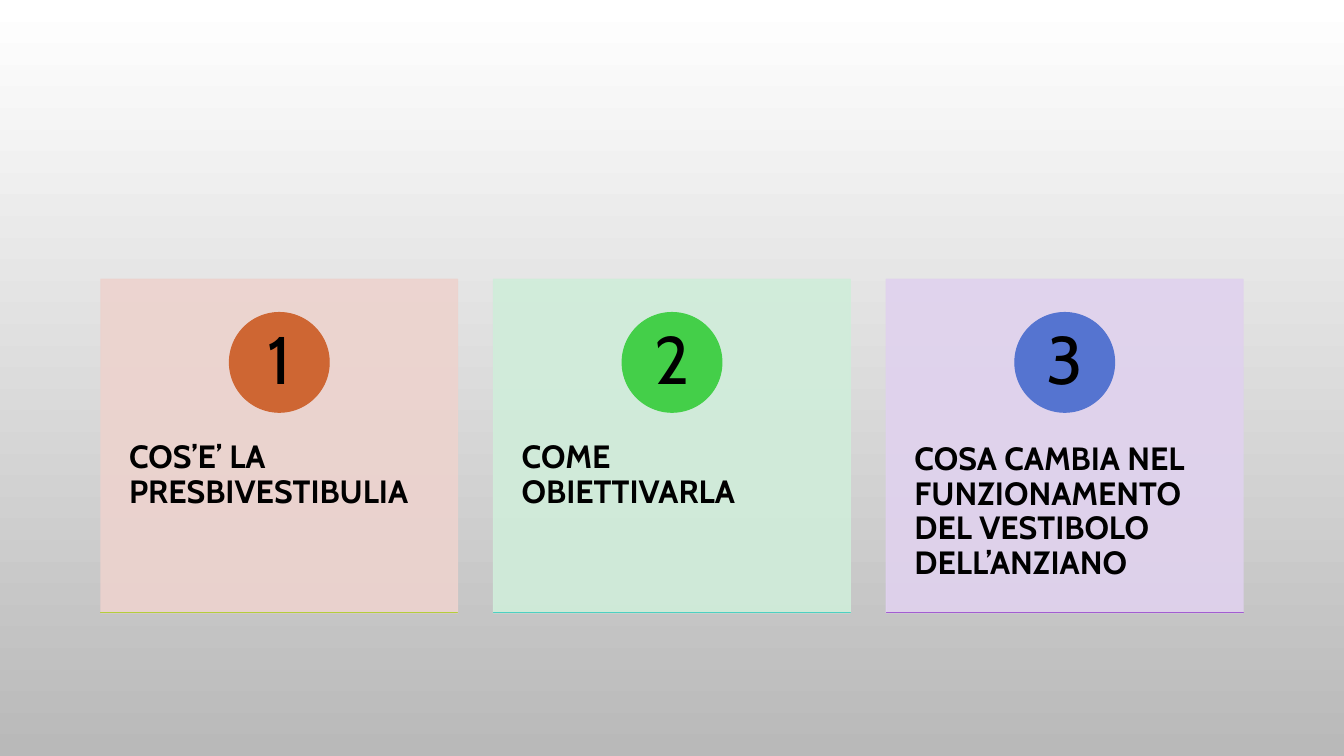
from lxml import etree
from pptx import Presentation
from pptx.dml.color import RGBColor
from pptx.enum.shapes import MSO_SHAPE
from pptx.enum.text import MSO_ANCHOR, PP_ALIGN
from pptx.oxml.ns import qn
from pptx.util import Inches, Pt

RECT, OVAL = MSO_SHAPE.RECTANGLE, MSO_SHAPE.OVAL
TOP, MIDDLE = MSO_ANCHOR.TOP, MSO_ANCHOR.MIDDLE
LEFT, CENTER = PP_ALIGN.LEFT, PP_ALIGN.CENTER

FONT = "Cabin"
BLACK = RGBColor(0x00, 0x00, 0x00)
WHITE = RGBColor(0xFF, 0xFF, 0xFF)
GREY = RGBColor(0xB9, 0xB9, 0xB9)

# Title, card colour, circle colour, base line colour
CARDS = [
    ("COS’E’ LA PRESBIVESTIBULIA", RGBColor(0xED, 0xD3, 0xCE),
     RGBColor(0xCE, 0x66, 0x33), RGBColor(0xB3, 0xCE, 0x3C)),
    ("COME OBIETTIVARLA", RGBColor(0xD0, 0xED, 0xDA),
     RGBColor(0x44, 0xCF, 0x49), RGBColor(0x4D, 0xD0, 0xC2)),
    ("COSA CAMBIA NEL FUNZIONAMENTO DEL VESTIBOLO DELL’ANZIANO",
     RGBColor(0xE0, 0xD2, 0xEE), RGBColor(0x55, 0x74, 0xD0),
     RGBColor(0xA3, 0x5D, 0xD1)),
]

CARD_LEFT, CARD_TOP, CARD_W, CARD_H = 1, 2.77, 3.54, 3.31
CARD_PITCH = 3.895
CIRCLE, NUMBER = 0.99, 0.7


def set_background(s):
    fill = s.background.fill
    fill.gradient()
    fill.gradient_angle = 270
    for stop, color, pos in zip(fill.gradient_stops, (WHITE, GREY), (0, 1)):
        stop.color.rgb = color
        stop.position = pos


def add_block(s, kind, x, y, w, h, color, opacity=100):
    sp = s.shapes.add_shape(kind, Inches(x), Inches(y), Inches(w), Inches(h))
    sp.shadow.inherit = False
    sp.fill.solid()
    sp.fill.fore_color.rgb = color
    sp.line.color.rgb = color
    sp.line.width = Pt(0.75)
    if opacity < 100:
        for clr in sp.element.spPr.iter(qn("a:srgbClr")):
            etree.SubElement(clr, qn("a:alpha"), val=str(opacity * 1000))


def add_text(s, text, x, y, w, h, size=23, bold=False, align=LEFT,
             anchor=TOP, inset=(0.28, 0.36)):
    sp = s.shapes.add_textbox(Inches(x), Inches(y), Inches(w), Inches(h))
    tf = sp.text_frame
    tf.word_wrap = True
    tf.vertical_anchor = anchor
    tf.margin_left = tf.margin_right = Inches(inset[0])
    tf.margin_top = tf.margin_bottom = Inches(inset[1])
    p = tf.paragraphs[0]
    p.alignment = align
    p.line_spacing = 0.9
    r = p.add_run()
    r.text = text
    r.font.name = FONT
    r.font.size = Pt(size)
    r.font.bold = bold
    r.font.color.rgb = BLACK


def add_card(s, number, title, card_color, circle_color, base_color):
    x = CARD_LEFT + (number - 1) * CARD_PITCH
    mid = x + CARD_W / 2
    # Card and title
    add_block(s, RECT, x, CARD_TOP, CARD_W, CARD_H, card_color, opacity=90)
    add_text(s, title, x, 4.03, CARD_W, 1.99, bold=True)
    # Numbered circle
    add_block(s, OVAL, mid - CIRCLE / 2, 3.1, CIRCLE, CIRCLE, circle_color)
    add_text(s, str(number), mid - NUMBER / 2, 3.25, NUMBER, NUMBER, size=48,
             align=CENTER, anchor=MIDDLE, inset=(0.08, 0.01))
    # Flat base along the bottom edge
    add_block(s, RECT, x, CARD_TOP + CARD_H, CARD_W, 0, base_color)


def main():
    prs = Presentation()
    prs.slide_width, prs.slide_height = Inches(13.33), Inches(7.5)
    s = prs.slides.add_slide(prs.slide_layouts[6])
    set_background(s)
    for number, card in enumerate(CARDS, 1):
        add_card(s, number, *card)
    prs.save("out.pptx")


if __name__ == "__main__":
    main()
